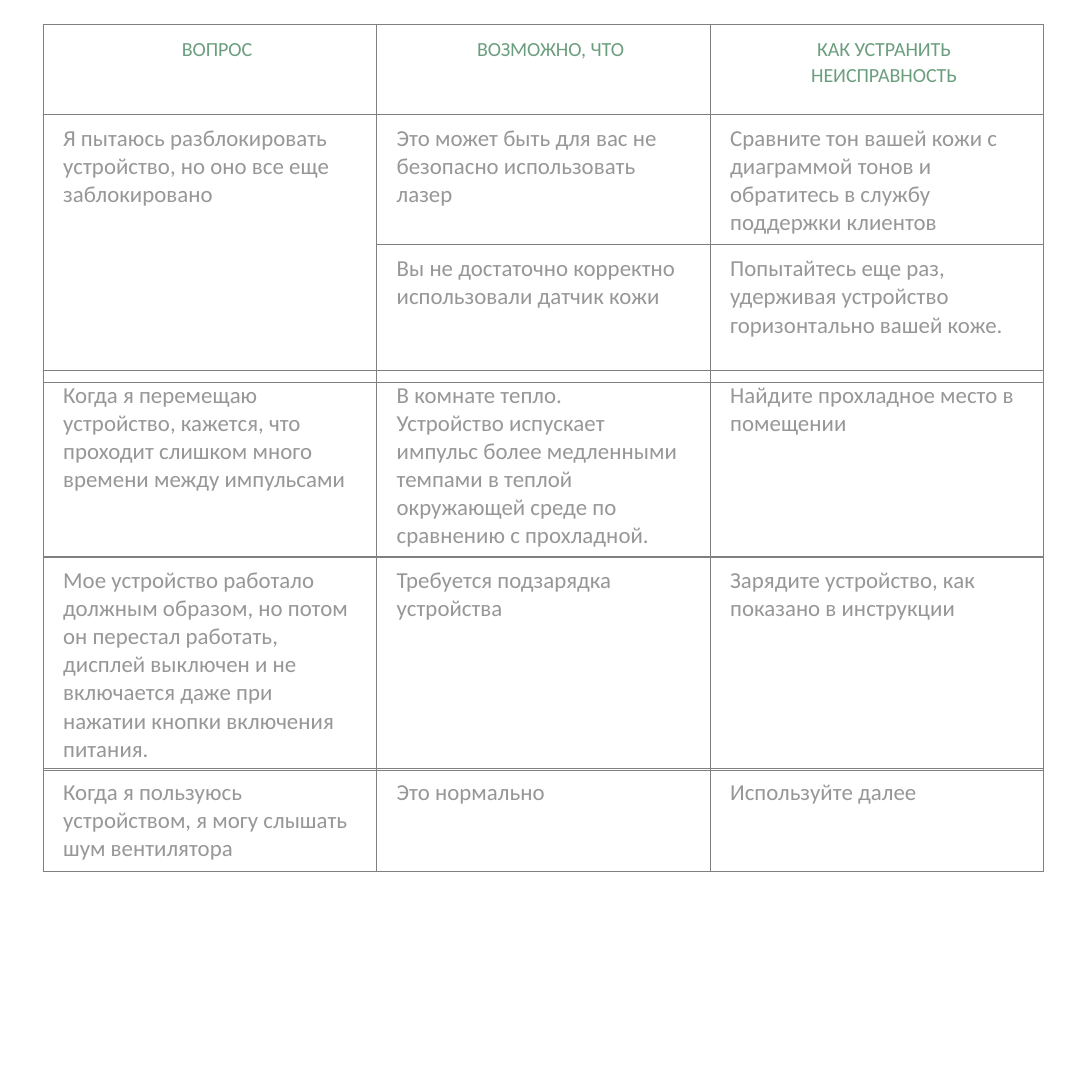
from lxml import etree
from pptx import Presentation
from pptx import util as u
from pptx.dml.color import RGBColor
from pptx.enum import text
from pptx.oxml.ns import qn

GREEN, GRAY, RULE = "6B9E7E", "979797", "808080"
FONT = "Calibri"
LEFT, COLUMN, COLUMNS = 0.53, 4.12, 3

HEADINGS = ["ВОПРОС", "ВОЗМОЖНО, ЧТО", "КАК УСТРАНИТЬ НЕИСПРАВНОСТЬ"]

# Each section: top, row heights, rows of cells; a cell lists its paragraphs by line
SECTIONS = [
    (0.3, [1.11, 1.6, 1.7], [
        HEADINGS,
        ["Я пытаюсь разблокировать устройство, но оно все еще заблокировано",
         "Это может быть для вас не безопасно использовать лазер",
         "Сравните тон вашей кожи с диаграммой тонов и обратитесь в службу поддержки клиентов"],
        [None,
         "Вы не достаточно корректно использовали датчик кожи",
         "Попытайтесь еще раз, удерживая устройство горизонтально вашей коже."],
    ]),
    (4.58, [2.29], [
        ["Когда я перемещаю устройство, кажется, что проходит слишком много "
         "времени между импульсами",
         "В комнате тепло.\n"
         "Устройство испускает импульс более медленными темпами в теплой "
         "окружающей среде по сравнению с прохладной.",
         "Найдите прохладное место в помещении"],
    ]),
    (6.87, [2.62], [
        ["Мое устройство работало должным образом, но потом\n"
         "он перестал работать,\n"
         "дисплей выключен и не\n"
         "включается даже при нажатии кнопки включения питания.",
         "Требуется подзарядка устройства",
         "Зарядите устройство, как показано в инструкции"],
    ]),
    (9.49, [1.27], [
        ["Когда я пользуюсь устройством, я могу слышать шум вентилятора",
         "Это нормально",
         "Используйте далее"],
    ]),
]


def paint(color_format, color):
    color_format.rgb = RGBColor.from_string(color)


def rule_cell(cell):
    """Thin rules on all four sides, no fill."""
    properties = cell._tc.get_or_add_tcPr()
    for side in ("lnL", "lnR", "lnT", "lnB"):
        rule = etree.SubElement(properties, qn(f"a:{side}"), w=str(u.Pt(0.25)))
        solid = etree.SubElement(rule, qn("a:solidFill"))
        etree.SubElement(solid, qn("a:srgbClr"), val=RULE)
    cell.fill.background()


def write_cell(cell, wording, heading):
    cell.margin_left = cell.margin_right = u.Cm(0.25)
    cell.margin_top, cell.margin_bottom = u.Cm(0.13), u.Cm(0.09)
    cell.vertical_anchor = text.MSO_ANCHOR.TOP
    frame = cell.text_frame
    for index, line in enumerate(wording.split("\n")):
        paragraph = frame.add_paragraph() if index else frame.paragraphs[0]
        if heading:
            paragraph.alignment = text.PP_ALIGN.CENTER
            paragraph.line_spacing = 1.1
            paragraph._p.get_or_add_pPr().set("marL", str(u.Cm(0.18)))
        run = paragraph.add_run()
        run.text = line
        run.font.name = FONT
        run.font.size = u.Pt(7 if heading else 8)
        paint(run.font.color, GREEN if heading else GRAY)


def add_section(slide, left, top, width, heights, rows):
    section = slide.shapes.add_table(
        len(rows), COLUMNS, u.Cm(left), u.Cm(top), u.Cm(width), u.Cm(sum(heights))).table
    section.first_row = section.horz_banding = False
    for column in section.columns:
        column.width = u.Cm(width / COLUMNS)
    for r, (height, wordings) in enumerate(zip(heights, rows)):
        section.rows[r].height = u.Cm(height)
        for c, wording in enumerate(wordings):
            cell = section.cell(r, c)
            rule_cell(cell)
            if wording is None:  # the question above spans this row too
                section.cell(r - 1, c).merge(cell)
            else:
                write_cell(cell, wording, wordings is HEADINGS)


def main():
    deck = Presentation()
    deck.slide_width = deck.slide_height = u.Cm(13.49)
    slide = deck.slides.add_slide(deck.slide_layouts[6])
    # Troubleshooting sections, one below another
    for top, heights, rows in SECTIONS:
        add_section(slide, LEFT, top, COLUMN * COLUMNS, heights, rows)
    deck.save("out.pptx")


if __name__ == "__main__":
    main()
